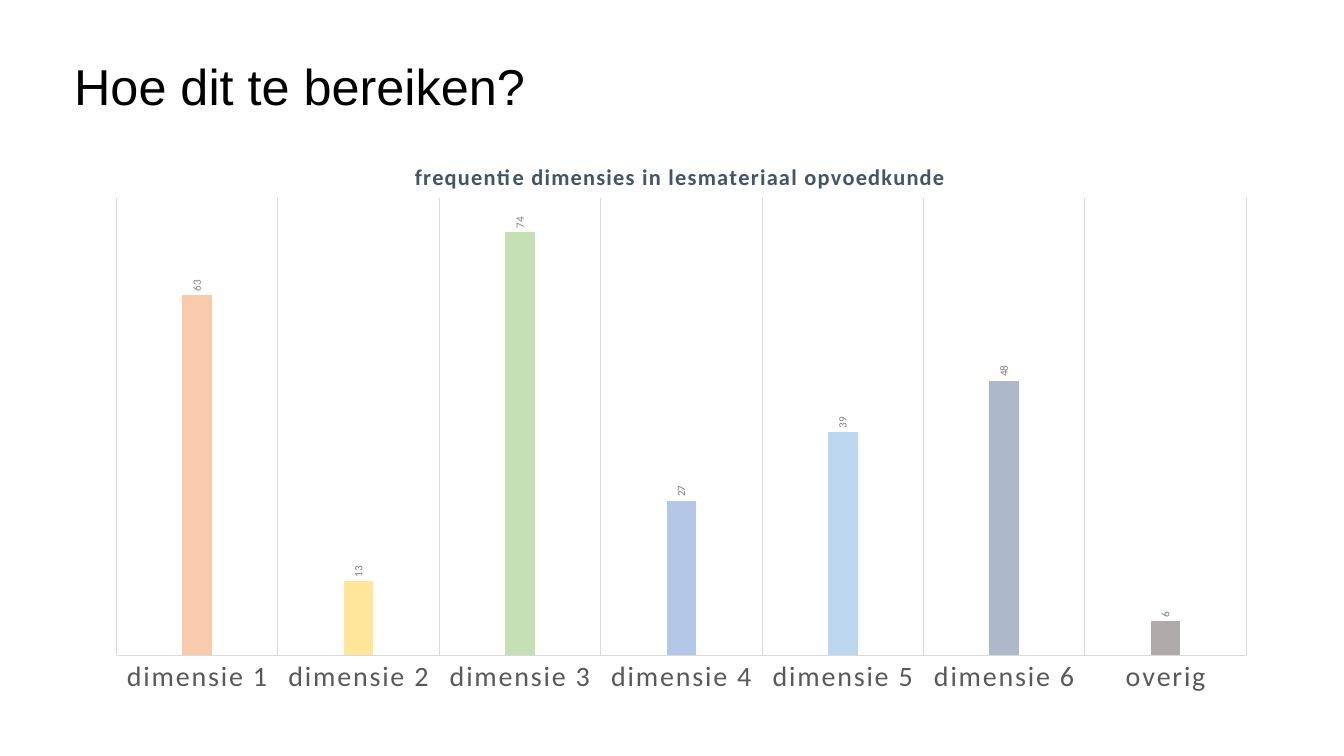
from pptx import Presentation
from pptx.chart.data import CategoryChartData
from pptx.dml.color import RGBColor
from pptx.enum.chart import XL_CHART_TYPE, XL_LABEL_POSITION, XL_TICK_MARK
from pptx.enum.text import MSO_ANCHOR, MSO_AUTO_SIZE, PP_ALIGN
from pptx.oxml import parse_xml
from pptx.oxml.ns import nsdecls
from pptx.util import Pt

COLUMN = XL_CHART_TYPE.COLUMN_CLUSTERED
OUTSIDE = XL_LABEL_POSITION.OUTSIDE_END
NO_TICK = XL_TICK_MARK.NONE
MIDDLE = MSO_ANCHOR.MIDDLE
NO_FIT = MSO_AUTO_SIZE.NONE
LEFT = PP_ALIGN.LEFT

SCALE = 914400 / 100.8
BARS = [
    ("dimensie 1", 63, "F8CBAD"),
    ("dimensie 2", 13, "FFE699"),
    ("dimensie 3", 74, "C5E0B4"),
    ("dimensie 4", 27, "B4C7E7"),
    ("dimensie 5", 39, "BDD7EE"),
    ("dimensie 6", 48, "ADB9CA"),
    ("overig", 6, "AFABAB"),
]


def px(num):
    return round(num * SCALE)


def color(code):
    return RGBColor.from_string(code)


def style(font, size, code, name="Calibri", bold=False):
    font.size = Pt(size)
    font.name = name
    font.bold = bold
    font.color.rgb = color(code)


def outline(line):
    line.color.rgb = color("D9D9D9")
    line.width = Pt(0.75)


def space(node, value):
    for props in node.xpath(".//a:defRPr | .//a:rPr"):
        props.set("spc", str(value))


def layout(x, y, w=None, h=None):
    inner = '<c:layoutTarget val="inner"/>' if w else ""
    size = f'<c:w val="{w}"/><c:h val="{h}"/>' if w else ""
    return parse_xml(
        f'<c:layout {nsdecls("c")}><c:manualLayout>{inner}'
        '<c:xMode val="edge"/><c:yMode val="edge"/>'
        f'<c:x val="{x}"/><c:y val="{y}"/>{size}'
        '</c:manualLayout></c:layout>')


def place(node, item):
    for old in node.xpath("./c:layout"):
        node.remove(old)
    after = node.xpath("./c:tx")
    if after:
        after[0].addnext(item)
    else:
        node.insert(0, item)


def add_title(slide, box):
    title = slide.shapes.title
    title.left, title.top, title.width, title.height = map(px, box)
    frame = title.text_frame
    frame.text = "Hoe dit te bereiken?"
    frame.word_wrap = False
    frame.auto_size = NO_FIT
    frame.vertical_anchor = MIDDLE
    para = frame.paragraphs[0]
    para.alignment = LEFT
    style(para.runs[0].font, 36, "000000", "Arial")


def add_bars(slide, box):
    data = CategoryChartData()
    data.categories = [name for name, _, _ in BARS]
    data.add_series("Series 1", [value for _, value, _ in BARS])
    chart = slide.shapes.add_chart(COLUMN, *map(px, box), data).chart
    style(chart.font, 10, "000000")
    chart.has_legend = False
    add_head(chart)
    set_axes(chart)

    plot = chart.plots[0]
    plot.vary_by_categories = False
    plot.gap_width = 444
    plot.overlap = -90
    bars = plot.series[0]
    bars.format.fill.solid()
    bars.format.fill.fore_color.rgb = color("5B9BD5")
    for spot, (_, _, code) in enumerate(BARS):
        fill = bars.points[spot].format.fill
        fill.solid()
        fill.fore_color.rgb = color(code)
    add_labels(bars)
    area = chart._chartSpace.chart.plotArea
    place(area, layout(0.02, 0.11, 0.96, 0.8))


def add_head(chart):
    chart.has_title = True
    head = chart.chart_title
    head.include_in_layout = False
    head.text_frame.text = "frequentie dimensies in lesmateriaal opvoedkunde"
    run = head.text_frame.paragraphs[0].runs[0]
    style(run.font, 16, "44546A", bold=True)
    space(head._element, 100)
    place(head._element, layout(0.27, 0.04))


def set_axes(chart):
    base = chart.category_axis
    base.major_tick_mark = base.minor_tick_mark = NO_TICK
    base.has_major_gridlines = True
    outline(base.major_gridlines.format.line)
    outline(base.format.line)
    style(base.tick_labels.font, 20, "595959")
    space(base._element, 120)
    scale = chart.value_axis
    scale.minimum_scale = 0
    scale.maximum_scale = 80
    scale.has_major_gridlines = False
    scale.visible = False


def add_labels(bars):
    labels = bars.data_labels
    labels.show_value = True
    labels.position = OUTSIDE
    style(labels.font, 8, "808080")
    body = labels._element.xpath("./c:txPr/a:bodyPr")[0]
    body.set("rot", "-5400000")
    body.set("vert", "horz")


def main():
    deck = Presentation()
    deck.slide_width = px(1344)
    deck.slide_height = px(756)
    slide = deck.slides.add_slide(deck.slide_layouts[5])
    add_title(slide, (64, 49, 564, 72))
    add_bars(slide, (93, 135, 1177, 572))
    deck.save("out.pptx")


if __name__ == "__main__":
    main()
